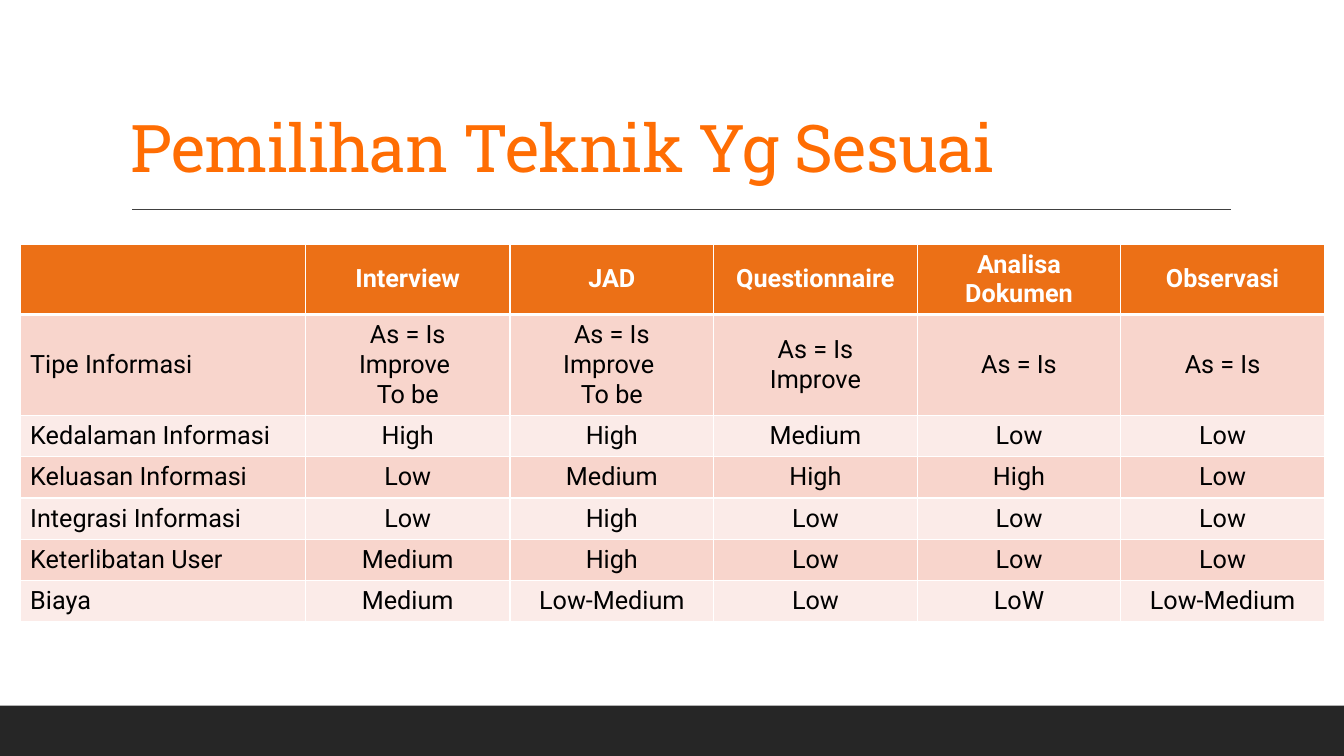
"""Build a slide with a table comparing information gathering techniques."""
from dataclasses import dataclass
from typing import Any

from lxml.etree import SubElement
from pptx import Presentation
from pptx.dml.color import RGBColor as RGB
from pptx.enum.shapes import MSO_CONNECTOR as CONN, MSO_SHAPE as SHAPE
from pptx.enum.text import MSO_ANCHOR as ANCHOR, PP_ALIGN as ALIGN
from pptx.oxml.ns import qn
from pptx.util import Emu, Inches, Pt

COLORS = {
    "title": "FF6D03", "rule": "404040", "footer": "262626", "white": "FFFFFF",
    "text": "000000", "header": "EC7016", "odd": "F8D5CC", "even": "FBEBE8",
}
GRID = Inches(0.1)
SLIDE_COLS, SLIDE_ROWS = 133.33, 75
COL_WIDTHS = [28.3, 20.3] + [20.2] * 4
ROW_HEIGHTS = [6.8, 9.7] + [4.1] * 5
TABLE = [
    ["", "Interview", "JAD", "Questionnaire", "Analisa Dokumen", "Observasi"],
    ["Tipe Informasi", "As = Is\nImprove \nTo be", "As = Is\nImprove \nTo be",
     "As = Is\nImprove", "As = Is", "As = Is"],
    ["Kedalaman Informasi", "High", "High", "Medium", "Low", "Low"],
    ["Keluasan Informasi", "Low", "Medium", "High", "High", "Low"],
    ["Integrasi Informasi", "Low", "High", "Low", "Low", "Low"],
    ["Keterlibatan User", "Medium", "High", "Low", "Low", "Low"],
    ["Biaya", "Medium", "Low-Medium", "Low", "LoW", "Low-Medium"],
]


@dataclass(frozen=True)
class Box:
    col: float
    row: float
    cols: float
    rows: float

    def emu(self) -> list[Emu]:
        return [units(n) for n in (self.col, self.row, self.cols, self.rows)]


@dataclass(frozen=True)
class RowStyle:
    fill: str
    color: str
    bold: bool
    top: float
    bottom: float


HEADER = RowStyle("header", "white", True, 1, 3)
FIRST = RowStyle("odd", "text", False, 3, 1)
ODD = RowStyle("odd", "text", False, 1, 1)
EVEN = RowStyle("even", "text", False, 1, 1)
ROW_STYLES = [HEADER, FIRST, EVEN, ODD, EVEN, ODD, EVEN]


def units(n: float) -> Emu:
    return Emu(round(n * GRID))


def rgb(name: str) -> RGB:
    return RGB.from_string(COLORS[name])


def set_font(font: Any, color: str, **formats: Any) -> None:
    for name, value in formats.items():
        setattr(font, name, value)
    font.color.rgb = rgb(color)


def add_footer(s: Any, box: Box) -> None:
    sp = s.shapes.add_shape(SHAPE.RECTANGLE, *box.emu())
    sp.shadow.inherit = False
    sp.fill.solid()
    sp.fill.fore_color.rgb = rgb("footer")
    sp.line.fill.background()


def add_rule(s: Any, start: float, end: float, row: float) -> None:
    ends = [units(n) for n in (start, row, end, row)]
    sp = s.shapes.add_connector(CONN.STRAIGHT, *ends)
    sp.line.color.rgb = rgb("rule")
    sp.line.width = Pt(1)
    SubElement(sp._element.spPr, qn("a:effectLst"))


def add_title(s: Any, box: Box, text: str) -> None:
    tf = s.shapes.add_textbox(*box.emu()).text_frame
    tf.word_wrap = True
    tf.vertical_anchor = ANCHOR.BOTTOM
    p = tf.paragraphs[0]
    p.line_spacing = 0.9
    r = p.add_run()
    r.text = text
    set_font(r.font, "title", name="Roboto Slab", size=Pt(47))
    r.font._element.set("spc", "-50")


def add_borders(cell: Any, style: RowStyle) -> None:
    tc_pr = cell._tc.get_or_add_tcPr()
    widths = {"lnL": 1, "lnR": 1, "lnT": style.top, "lnB": style.bottom}
    for side, width in widths.items():
        ln = SubElement(tc_pr, qn(f"a:{side}"), w=str(Pt(width)))
        fill = SubElement(ln, qn("a:solidFill"))
        SubElement(fill, qn("a:srgbClr"), val=COLORS["white"])


def fill_cell(cell: Any, text: str, style: RowStyle, align: ALIGN) -> None:
    add_borders(cell, style)
    cell.fill.solid()
    cell.fill.fore_color.rgb = rgb(style.fill)
    cell.vertical_anchor = ANCHOR.MIDDLE
    cell.text = text
    for p in cell.text_frame.paragraphs:
        p.alignment = align
        for font in [p.font] + [r.font for r in p.runs]:
            set_font(font, style.color, name="Roboto", size=Pt(18), bold=style.bold)


def add_techniques(s: Any, col: float, row: float) -> None:
    box = Box(col, row, sum(COL_WIDTHS), sum(ROW_HEIGHTS))
    table = s.shapes.add_table(len(TABLE), len(COL_WIDTHS), *box.emu()).table
    table.first_row = table.horz_banding = False
    for column, width in zip(table.columns, COL_WIDTHS):
        column.width = units(width)
    for line, height, texts, style in zip(table.rows, ROW_HEIGHTS, TABLE, ROW_STYLES):
        line.height = units(height)
        for i, (cell, text) in enumerate(zip(line.cells, texts)):
            fill_cell(cell, text, style, ALIGN.CENTER if i else ALIGN.LEFT)


def main() -> None:
    prs = Presentation()
    prs.slide_width, prs.slide_height = units(SLIDE_COLS), units(SLIDE_ROWS)
    s = prs.slides.add_slide(prs.slide_layouts[6])
    add_footer(s, Box(0, 70, SLIDE_COLS, 5))
    add_rule(s, 13.1, 122.1, 20.8)
    add_title(s, Box(12, 3.1, 110, 15.9), "Pemilihan Teknik Yg Sesuai")
    add_techniques(s, 2, 24.2)
    prs.save("out.pptx")


if __name__ == "__main__":
    main()
